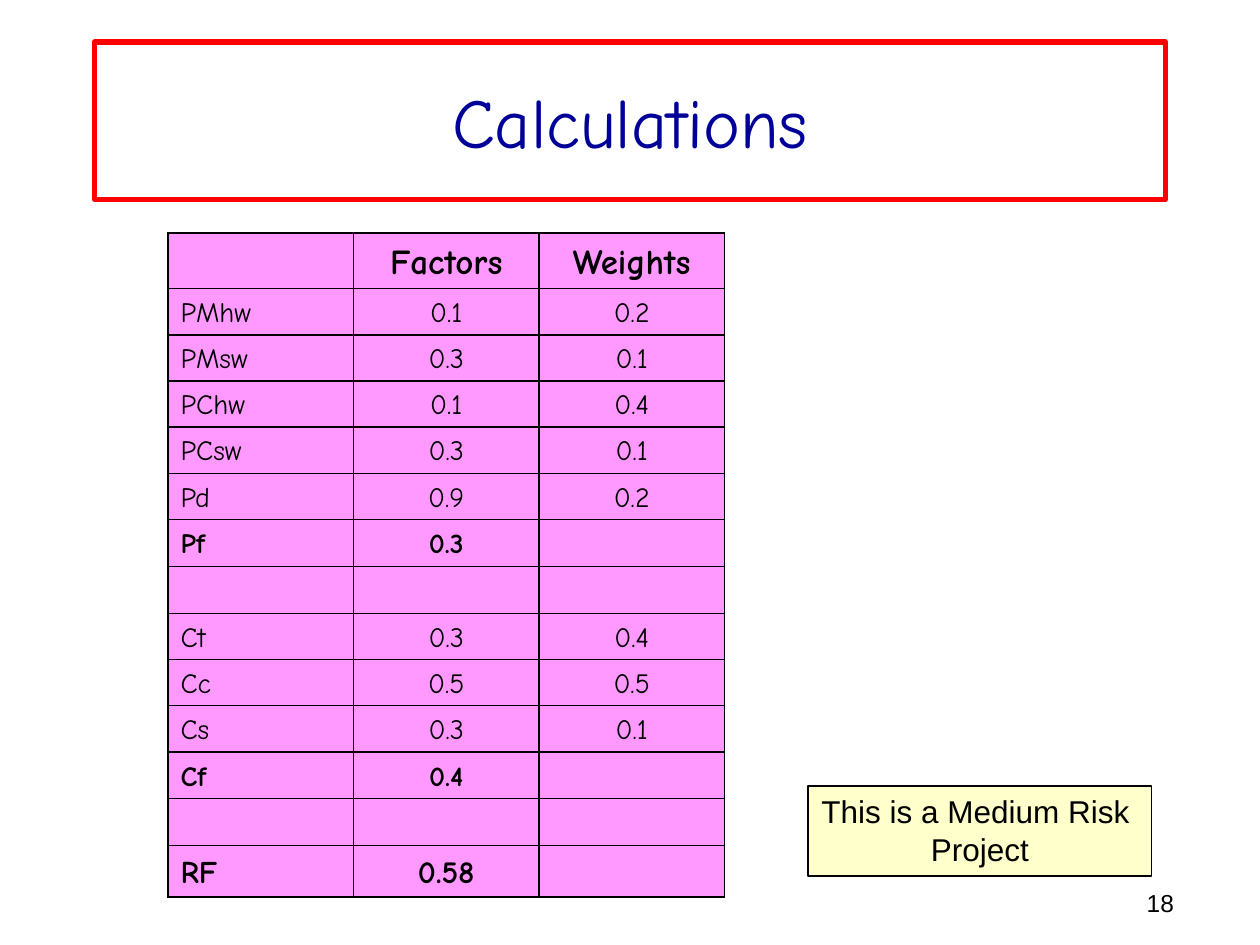
"""Build the risk factor calculations slide."""
from dataclasses import dataclass

import pptx
import pptx.dml.color
import pptx.enum.shapes
import pptx.enum.text
import pptx.oxml
import pptx.oxml.ns
import pptx.util

ALIGN = pptx.enum.text.PP_ALIGN
ANCHOR = pptx.enum.text.MSO_ANCHOR
SCRIPT, SANS = "Comic Neue", "Arial"
BLACK, PINK = "000000", "FF99FF"
WIDTH, HEIGHT = pptx.util.Inches(10), pptx.util.Inches(7.5)
GRID_COLS, GRID_ROWS = 120, 90
HEADER_H, BODY_H, TOTAL_H = 5, 4.4, 4.9


@dataclass
class Box:
    """A rectangle in grid columns and rows."""
    col: float
    row: float
    cols: float
    rows: float

    def emu(self) -> list[int]:
        """Return left, top, width and height on the slide."""
        return [across(self.col), down(self.row), across(self.cols), down(self.rows)]


@dataclass
class Style:
    """The look of a text."""
    size: float
    font: str = SCRIPT
    color: str = BLACK
    bold: bool = False
    align: ALIGN = ALIGN.CENTER


@dataclass
class Panel:
    """A rectangle that holds lines of text."""
    box: Box
    lines: list[str]
    style: Style
    fill: str | None = None
    line: str | None = None
    line_pt: float = 0
    anchor: ANCHOR = ANCHOR.TOP
    wrap: bool = True


@dataclass
class Entry:
    """One row of the factor table."""
    label: str = ""
    factor: str = ""
    weight: str = ""
    size: float = 16
    bold: bool = False
    rows: float = BODY_H


PANELS = [
    Panel(Box(88, 84, 25, 6), ["18"], Style(14, SANS, align=ALIGN.RIGHT)),
    Panel(Box(9, 4, 102, 15), ["Calculations"], Style(40, color="000099"),
          line="FF0000", line_pt=3, anchor=ANCHOR.MIDDLE),
    Panel(Box(76.95, 74.85, 32.75, 8.6), ["This is a Medium Risk ", "Project"],
          Style(18, SANS), "FFFFCC", BLACK, 0.75, wrap=False),
]
TABLE_BOX = Box(16, 22.2, 53, HEADER_H + 12 * BODY_H + TOTAL_H)
ENTRIES = [
    Entry("", "Factors", "Weights", 20, True, HEADER_H),
    Entry("PMhw", "0.1", "0.2"),
    Entry("PMsw", "0.3", "0.1"),
    Entry("PChw", "0.1", "0.4"),
    Entry("PCsw", "0.3", "0.1"),
    Entry("Pd", "0.9", "0.2"),
    Entry("Pf", "0.3", bold=True),
    Entry(),
    Entry("Ct", "0.3", "0.4"),
    Entry("Cc", "0.5", "0.5"),
    Entry("Cs", "0.3", "0.1"),
    Entry("Cf", "0.4", bold=True),
    Entry(),
    Entry("RF", "0.58", size=18, bold=True, rows=TOTAL_H),
]


def across(cols: float) -> int:
    """Turn grid columns into a length."""
    return round(WIDTH * cols / GRID_COLS)


def down(rows: float) -> int:
    """Turn grid rows into a length."""
    return round(HEIGHT * rows / GRID_ROWS)


def rgb(value: str) -> pptx.dml.color.RGBColor:
    """Turn a hex string into a colour."""
    return pptx.dml.color.RGBColor.from_string(value)


def apply(target, values: dict) -> None:
    """Set each named attribute of the target."""
    for name, value in values.items():
        setattr(target, name, value)


def paint(fill, color: str | None) -> None:
    """Fill with a solid colour, or with nothing."""
    if color is None:
        fill.background()
    else:
        fill.solid()
        fill.fore_color.rgb = rgb(color)


def write(p, text: str, style: Style) -> None:
    """Write one styled paragraph."""
    p.alignment = style.align
    if not text:
        p._p.get_or_add_endParaRPr().set("sz", str(round(style.size * 100)))
        return
    r = p.add_run()
    r.text = text
    apply(r.font, {"name": style.font, "size": pptx.util.Pt(style.size), "bold": style.bold})
    r.font.color.rgb = rgb(style.color)


def draw_panel(s, panel: Panel) -> None:
    """Draw a rectangle with its text."""
    sp = s.shapes.add_shape(pptx.enum.shapes.MSO_SHAPE.RECTANGLE, *panel.box.emu())
    sp.shadow.inherit = False
    paint(sp.fill, panel.fill)
    paint(sp.line.fill, panel.line)
    if panel.line:
        sp.line.width = pptx.util.Pt(panel.line_pt)
    tf = sp.text_frame
    apply(tf, {"word_wrap": panel.wrap, "vertical_anchor": panel.anchor})
    for i, text in enumerate(panel.lines):
        write(tf.add_paragraph() if i else tf.paragraphs[0], text, panel.style)


def draw_borders(cell, color: str, points: float) -> None:
    """Draw all four borders of a cell."""
    for side in ("lnL", "lnR", "lnT", "lnB"):
        cell._tc.get_or_add_tcPr().append(pptx.oxml.parse_xml(
            f'<a:{side} {pptx.oxml.ns.nsdecls("a")} w="{pptx.util.Pt(points)}">'
            f'<a:solidFill><a:srgbClr val="{color}"/></a:solidFill></a:{side}>'))


def draw_table(s, box: Box, entries: list[Entry]) -> None:
    """Draw the table of factors and weights."""
    table = s.shapes.add_table(len(entries), 3, *box.emu()).table
    apply(table, {"first_row": False, "horz_banding": False})
    for column in table.columns:
        column.width = across(box.cols / 3)
    for row, entry in zip(table.rows, entries):
        row.height = down(entry.rows)
        for i, text in enumerate((entry.label, entry.factor, entry.weight)):
            cell = row.cells[i]
            draw_borders(cell, BLACK, 1)
            paint(cell.fill, PINK)
            cell.vertical_anchor = ANCHOR.BOTTOM
            p = cell.text_frame.paragraphs[0]
            p.line_spacing = 0.95
            align = ALIGN.CENTER if i else ALIGN.LEFT
            write(p, text, Style(entry.size, bold=entry.bold, align=align))


def main() -> None:
    """Build and save the slide."""
    prs = pptx.Presentation()
    apply(prs, {"slide_width": WIDTH, "slide_height": HEIGHT})
    s = prs.slides.add_slide(prs.slide_layouts[6])
    number, title, note = PANELS
    draw_panel(s, number)
    draw_panel(s, title)
    draw_table(s, TABLE_BOX, ENTRIES)
    draw_panel(s, note)
    prs.save("out.pptx")


if __name__ == "__main__":
    main()
